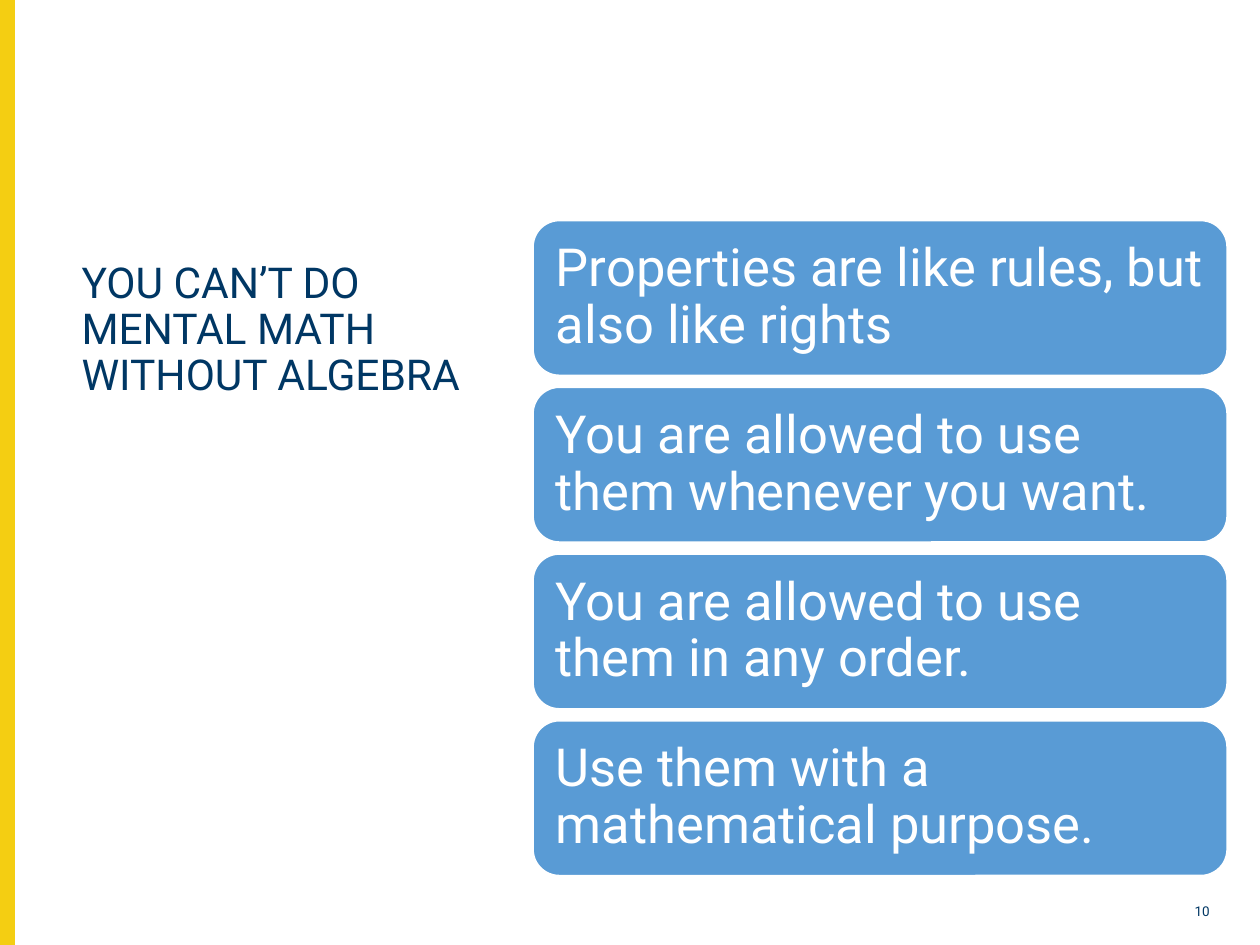
"""Build the mental math slide: a title beside four stacked rule cards."""
from pptx import Presentation
from pptx import util as u
from pptx.dml.color import RGBColor
from pptx.enum import shapes, text

TITLE = "YOU CAN’T DO MENTAL MATH WITHOUT ALGEBRA"
RULES = [
    "Properties are like rules, but also like rights",
    "You are allowed to use them whenever you want.",
    "You are allowed to use them in any order.",
    "Use them with a mathematical purpose.",
]
PAGE_NUMBER = "10"
COLORS = {"navy": "003764", "yellow": "F4CE12", "blue": "599BD5", "white": "FFFFFF"}
FONT = "Roboto"
CARD_LEFT, CARD_WIDTH, CARD_HEIGHT = 4.23, 5.51, 1.23
FIRST_TOP, LAST_TOP = 1.75, 5.72
CARD_PITCH = (LAST_TOP - FIRST_TOP) / (len(RULES) - 1)


def color(name):
    return RGBColor.from_string(COLORS[name])


def write(holder, words, size, ink, spacing, anchor, align="LEFT", inset=(0.1, 0.05)):
    frame = holder.text_frame
    side, edge = (u.Inches(value) for value in inset)
    frame_format = {
        "word_wrap": True,
        "auto_size": text.MSO_AUTO_SIZE.NONE,
        "vertical_anchor": text.MSO_ANCHOR[anchor],
        "margin_left": side, "margin_right": side,
        "margin_top": edge, "margin_bottom": edge,
    }
    for name, value in frame_format.items():
        setattr(frame, name, value)
    paragraph = frame.paragraphs[0]
    paragraph.alignment = text.PP_ALIGN[align]
    paragraph.line_spacing = spacing
    run = paragraph.add_run()
    run.text = words
    for name, value in {"name": FONT, "size": u.Pt(size)}.items():
        setattr(run.font, name, value)
    run.font.color.rgb = color(ink)


def add_block(slide, kind, box, fill, line):
    block = slide.shapes.add_shape(kind, *map(u.Inches, box))
    block.shadow.inherit = False
    block.fill.solid()
    block.fill.fore_color.rgb = color(fill)
    block.line.color.rgb = color(line)
    block.line.width = u.Pt(1)
    return block


def add_label(slide, box, *args, **options):
    write(slide.shapes.add_textbox(*map(u.Inches, box)), *args, **options)


def main():
    deck = Presentation()
    deck.slide_width, deck.slide_height = u.Inches(10), u.Inches(7.5)
    slide = deck.slides.add_slide(deck.slide_layouts[6])

    add_block(slide, shapes.MSO_SHAPE.RECTANGLE, (0, 0, 0.11, 7.5), "yellow", "yellow")
    add_label(slide, (0.55, 1.68, 3.46, 1.54), TITLE, 24.3, "navy", 0.9, "BOTTOM")
    add_label(slide, (9.2, 7.14, 0.5, 0.21), PAGE_NUMBER, 7.7, "navy", 0.8, "TOP",
              align="RIGHT")

    for index, rule in enumerate(RULES):
        top = FIRST_TOP + index * CARD_PITCH
        card = add_block(slide, shapes.MSO_SHAPE.ROUNDED_RECTANGLE,
                         (CARD_LEFT, top, CARD_WIDTH, CARD_HEIGHT), "blue", "white")
        card.adjustments[0] = 0.17
        write(card, rule, 30, "white", 0.9, "MIDDLE", inset=(0.12, 0.12))

    deck.save("out.pptx")


if __name__ == "__main__":
    main()
